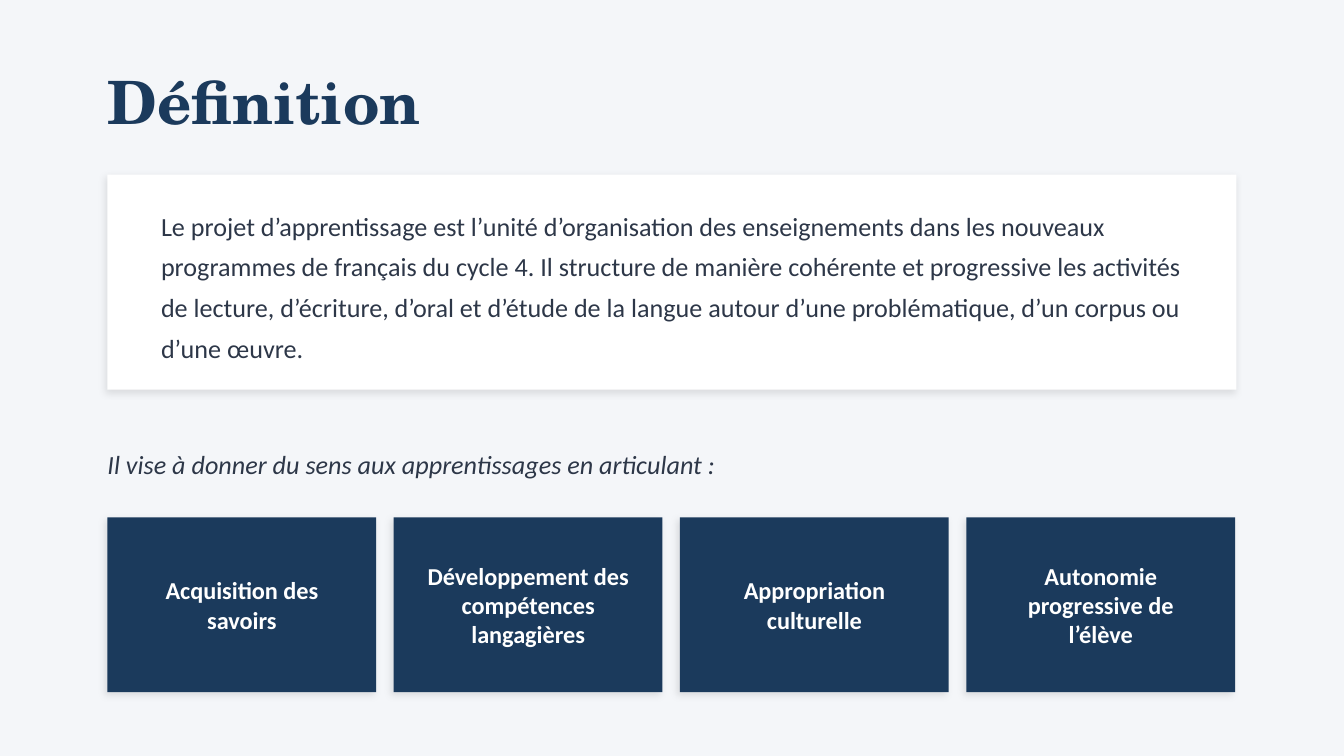
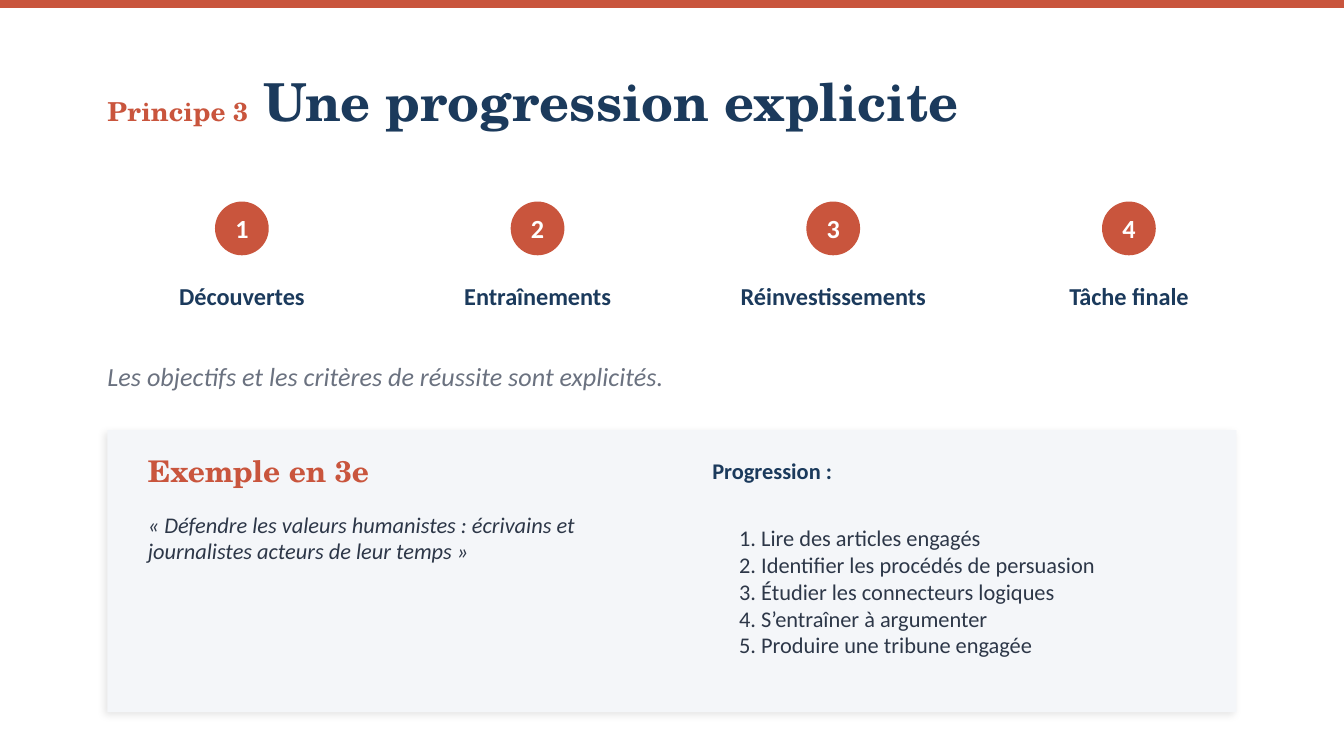
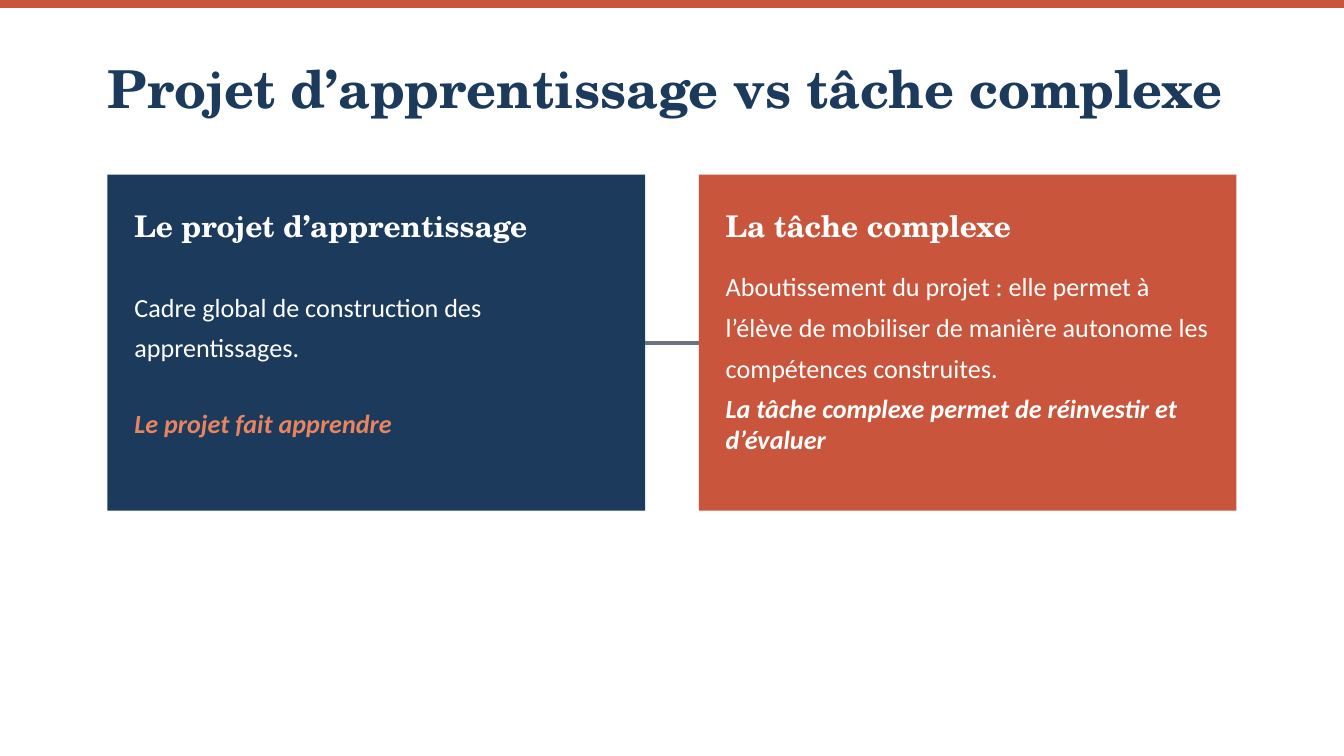
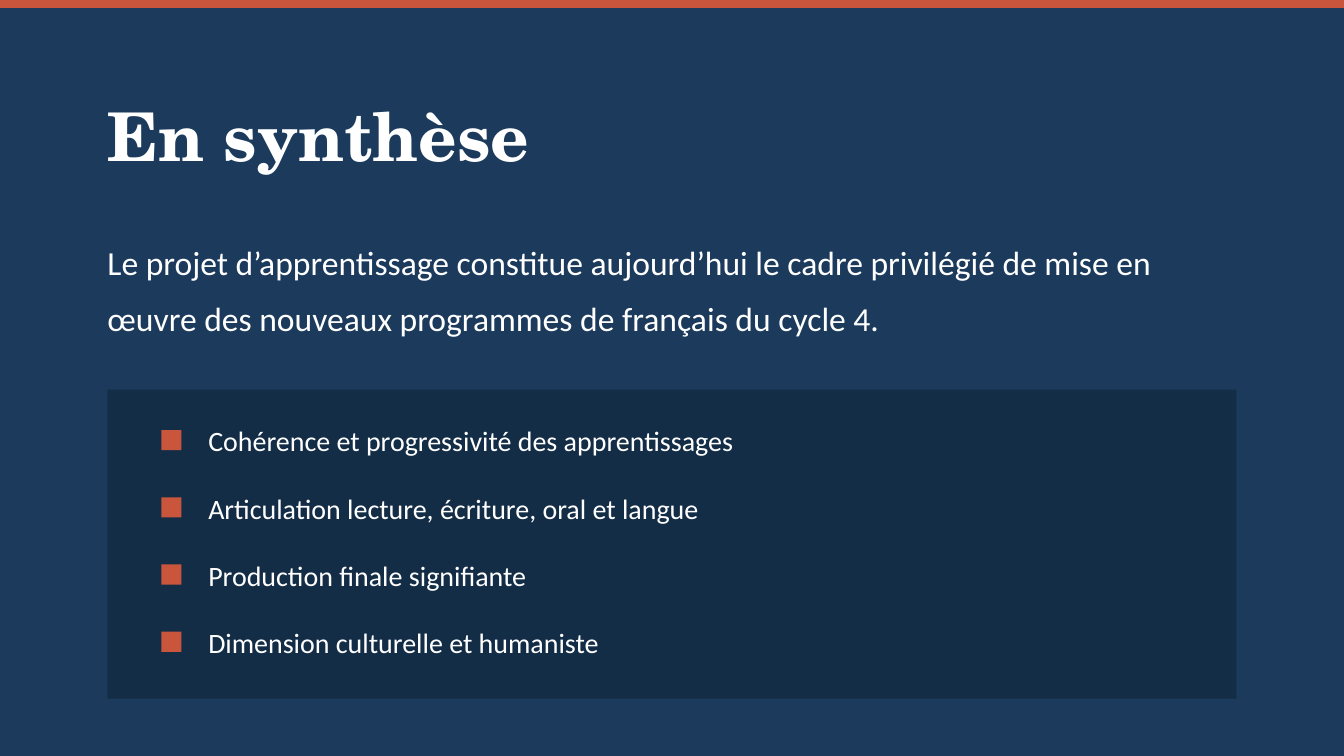
"""Build four slides on the learning project in the French curriculum of cycle 4."""
import lxml.etree
import pptx
import pptx.dml.color
import pptx.enum.shapes
import pptx.enum.text
import pptx.oxml.ns
import pptx.util

Pt = pptx.util.Pt
qn = pptx.oxml.ns.qn
RGB = pptx.dml.color.RGBColor.from_string
SHAPE = pptx.enum.shapes.MSO_SHAPE
ALIGN = pptx.enum.text.PP_ALIGN

COLORS = {
    "navy": "1B3A5C",
    "deep": "142D47",
    "brick": "C9553D",
    "peach": "E8845F",
    "mist": "F4F6F9",
    "ink": "2D3748",
    "grey": "6B7280",
    "white": "FFFFFF",
}
SERIF, SANS = "TeX Gyre Schola", "Calibri"
WIDTH, HEIGHT = 720, 405
LEFT, CONTENT = 57.6, 604.8


def draw(slide, kind, box, color, shadow=False):
    shape = slide.shapes.add_shape(kind, *map(Pt, box))
    shape.shadow.inherit = False
    shape.fill.solid()
    shape.fill.fore_color.rgb = RGB(COLORS[color])
    shape.line.fill.background()
    if shadow:
        effects = shape._element.spPr.find(qn("a:effectLst"))
        outer = lxml.etree.SubElement(effects, qn("a:outerShdw"), blurRad=str(Pt(4)),
                                      dist=str(Pt(2)), dir="8100000", algn="bl", rotWithShape="0")
        black = lxml.etree.SubElement(outer, qn("a:srgbClr"), val="000000")
        lxml.etree.SubElement(black, qn("a:alpha"), val="10000")
    return shape


def write(slide, box, text, size, color, font=SANS, bold=False, italic=False,
          align=ALIGN.LEFT, spacing=None, padded=False):
    frame = slide.shapes.add_textbox(*map(Pt, box)).text_frame
    frame.word_wrap = True
    frame.vertical_anchor = pptx.enum.text.MSO_ANCHOR.MIDDLE
    frame.margin_left = frame.margin_right = Pt(7.2 if padded else 0)
    frame.margin_top = frame.margin_bottom = Pt(3.6 if padded else 0)
    frame.text = text
    for paragraph in frame.paragraphs:
        paragraph.alignment = align
        if spacing:
            paragraph.line_spacing = spacing
        for run in paragraph.runs:
            run.font.name = font
            run.font.size = Pt(size)
            run.font.bold = bold
            run.font.italic = italic
            run.font.color.rgb = RGB(COLORS[color])
    return frame


deck = pptx.Presentation()
deck.slide_width, deck.slide_height = Pt(WIDTH), Pt(HEIGHT)

slides = []
for background, banded in [("mist", False), ("white", True), ("white", True), ("navy", True)]:
    slide = deck.slides.add_slide(deck.slide_layouts[6])
    slide.background.fill.solid()
    slide.background.fill.fore_color.rgb = RGB(COLORS[background])
    if banded:
        draw(slide, SHAPE.RECTANGLE, (0, 0, WIDTH, 4.32), "brick")
    slides.append(slide)
definition, principle, comparison, summary = slides

write(definition, (LEFT, 28.8, CONTENT, 50.4), "Définition", 32, "navy", SERIF, bold=True)
draw(definition, SHAPE.RECTANGLE, (LEFT, 93.6, CONTENT, 115.2), "white", shadow=True)
write(definition, (79.2, 100.8, 561.6, 100.8),
      "Le projet d’apprentissage est l’unité d’organisation des enseignements dans les nouveaux "
      "programmes de français du cycle 4. Il structure de manière cohérente et progressive les "
      "activités de lecture, d’écriture, d’oral et d’étude de la langue autour d’une "
      "problématique, d’un corpus ou d’une œuvre.",
      14, "ink", spacing=1.3, padded=True)
write(definition, (LEFT, 230.4, CONTENT, 36),
      "Il vise à donner du sens aux apprentissages en articulant :", 14, "ink", italic=True)
aims = [
    "Acquisition des savoirs",
    "Développement des compétences langagières",
    "Appropriation culturelle",
    "Autonomie progressive de l’élève",
]
for index, aim in enumerate(aims):
    x = LEFT + index * 153.36
    draw(definition, SHAPE.RECTANGLE, (x, 277.2, 144, 93.6), "navy", shadow=True)
    write(definition, (x + 10.8, 291.6, 122.4, 64.8), aim, 13, "white", bold=True,
          align=ALIGN.CENTER, padded=True)

heading = write(principle, (LEFT, 21.6, CONTENT, 64.8), "Principe 3", 14, "brick", SERIF, bold=True)
topic = heading.paragraphs[0].add_run()
topic.text = " Une progression explicite"
topic.font.name = SERIF
topic.font.size = Pt(28)
topic.font.bold = True
topic.font.color.rgb = RGB(COLORS["navy"])

steps = ["Découvertes", "Entraînements", "Réinvestissements", "Tâche finale"]
for index, step in enumerate(steps):
    x = LEFT + index * 158.4
    badge = (x + 57.6, 108, 28.8, 28.8)
    draw(principle, SHAPE.OVAL, badge, "brick")
    write(principle, badge, str(index + 1), 14, "white", bold=True, align=ALIGN.CENTER, padded=True)
    write(principle, (x, 144, 144, 28.8), step, 13, "navy", bold=True, align=ALIGN.CENTER)

write(principle, (LEFT, 187.2, CONTENT, 28.8),
      "Les objectifs et les critères de réussite sont explicités.", 14, "grey", italic=True)
draw(principle, SHAPE.RECTANGLE, (LEFT, 230.4, CONTENT, 151.2), "mist", shadow=True)
write(principle, (79.2, 237.6, 216, 28.8), "Exemple en 3e", 16, "brick", SERIF, bold=True)
write(principle, (79.2, 266.4, 252, 43.2),
      "« Défendre les valeurs humanistes : écrivains et journalistes acteurs de leur temps »",
      12, "ink", italic=True)
write(principle, (381.6, 241.2, 252, 21.6), "Progression :", 12, "navy", bold=True)
lessons = [
    "1. Lire des articles engagés",
    "2. Identifier les procédés de persuasion",
    "3. Étudier les connecteurs logiques",
    "4. S’entraîner à argumenter",
    "5. Produire une tribune engagée",
]
write(principle, (396, 266.4, 237.6, 100.8), "\n".join(lessons), 12, "ink")

write(comparison, (LEFT, 21.6, CONTENT, 50.4), "Projet d’apprentissage vs tâche complexe",
      28, "navy", SERIF, bold=True)
concepts = [
    ("Le projet d’apprentissage", "Cadre global de construction des apprentissages.",
     "Le projet fait apprendre", "navy", "peach"),
    ("La tâche complexe",
     "Aboutissement du projet : elle permet à l’élève de mobiliser de manière autonome "
     "les compétences construites.",
     "La tâche complexe permet de réinvestir et d’évaluer", "brick", "white"),
]
cards = []
for index, (concept, role, effect, fill, accent) in enumerate(concepts):
    x = LEFT + index * 316.8
    cards.append(draw(comparison, SHAPE.RECTANGLE, (x, 93.6, 288, 180), fill))
    write(comparison, (x + 14.4, 104.4, 259.2, 32.4), concept, 16, "white", SERIF, bold=True)
    write(comparison, (x + 14.4, 144, 259.2, 57.6), role, 14, "white", spacing=1.3)
    write(comparison, (x + 14.4, 208.8, 259.2, 36), effect, 14, accent, bold=True, italic=True)

project, task = cards
bridge = comparison.shapes.add_connector(
    pptx.enum.shapes.MSO_CONNECTOR.STRAIGHT, Pt(345.6), Pt(183.6), Pt(374.4), Pt(183.6))
bridge.begin_connect(project, 3)
bridge.end_connect(task, 1)
bridge.line.color.rgb = RGB(COLORS["grey"])
bridge.line.width = Pt(2)
lxml.etree.SubElement(bridge._element.spPr, qn("a:effectLst"))

write(summary, (LEFT, 43.2, CONTENT, 57.6), "En synthèse", 36, "white", SERIF, bold=True)
write(summary, (LEFT, 115.2, CONTENT, 72),
      "Le projet d’apprentissage constitue aujourd’hui le cadre privilégié de mise en œuvre "
      "des nouveaux programmes de français du cycle 4.", 18, "white", spacing=1.4)
draw(summary, SHAPE.RECTANGLE, (LEFT, 208.8, CONTENT, 165.6), "deep")
takeaways = [
    "Cohérence et progressivité des apprentissages",
    "Articulation lecture, écriture, oral et langue",
    "Production finale signifiante",
    "Dimension culturelle et humaniste",
]
for index, takeaway in enumerate(takeaways):
    y = 230.4 + index * 36
    draw(summary, SHAPE.RECTANGLE, (86.4, y, 10.8, 10.8), "brick")
    write(summary, (111.6, y - 8.64, 518.4, 28.8), takeaway, 15, "white")

deck.save("out.pptx")
